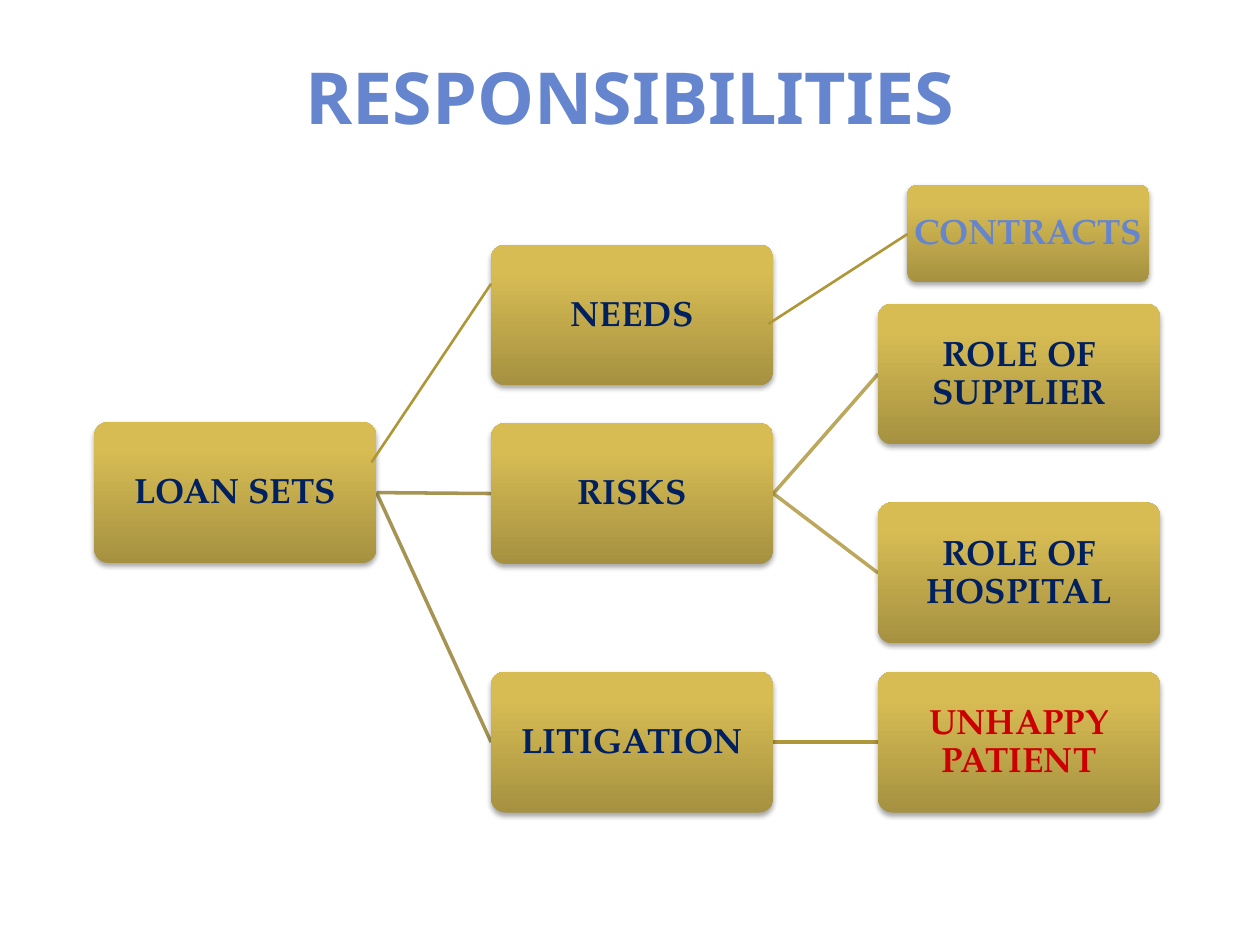
"""Build the slide on responsibilities for loan sets."""
from lxml import etree
from pptx import Presentation, util as u
from pptx.dml.color import RGBColor
from pptx.enum import shapes, text
from pptx.oxml import ns

TITLE = "RESPONSIBILITIES"
NAVY, BLUE, RED = "002060", "6585CF", "CC0000"
GRADIENT = [(0, "A59140"), (80, "D7BC54"), (100, "DABF52")]
COLUMNS = [1.9, 9.9, 17.7]
BOX_WIDTH, BOX_HEIGHT = 5.69, 2.84
BOXES = {
    "LOAN SETS": (0, 8.51, NAVY),
    "NEEDS": (1, 4.93, NAVY),
    "RISKS": (1, 8.53, NAVY),
    "LITIGATION": (1, 13.54, NAVY),
    "ROLE OF SUPPLIER": (2, 6.12, NAVY),
    "ROLE OF HOSPITAL": (2, 10.13, NAVY),
    "UNHAPPY PATIENT": (2, 13.54, RED),
}
LINKS = [
    ("LOAN SETS", "RISKS", "A59452"),
    ("LOAN SETS", "LITIGATION", "A59452"),
    ("RISKS", "ROLE OF SUPPLIER", "BBA85D"),
    ("RISKS", "ROLE OF HOSPITAL", "BBA85D"),
    ("LITIGATION", "UNHAPPY PATIENT", "AF9738"),
]
CONTRACTS = ("CONTRACTS", 18.29, 3.73, 4.88, 1.96, BLUE)
SLANTED_LINES = [(7.49, 9.32, 9.9, 5.72), (15.49, 6.53, 18.29, 4.72)]


def color(value):
    return RGBColor.from_string(value)


def add_element(parent, tag, **attributes):
    values = {name: str(value) for name, value in attributes.items()}
    return etree.SubElement(parent, ns.qn(tag), values)


def write(shape, words, font_name, size, font_color):
    frame = shape.text_frame
    frame.word_wrap = True
    frame.vertical_anchor = text.MSO_ANCHOR.MIDDLE
    paragraph = frame.paragraphs[0]
    paragraph.alignment = text.PP_ALIGN.CENTER
    run = paragraph.add_run()
    run.text = words
    run.font.name = font_name
    run.font.size = u.Pt(size)
    run.font.bold = True
    run.font.color.rgb = color(font_color)
    return frame


def add_box(slide, words, left, top, width, height, font_color):
    shape = slide.shapes.add_shape(
        shapes.MSO_SHAPE.ROUNDED_RECTANGLE,
        u.Cm(left), u.Cm(top), u.Cm(width), u.Cm(height))
    shape.adjustments[0] = 0.1
    shape.line.fill.background()
    shape.fill.gradient()
    shape.fill.gradient_angle = 90
    properties = shape.element.spPr
    stops = properties.find(".//" + ns.qn("a:gsLst"))
    for stop in list(stops):
        stops.remove(stop)
    for position, value in GRADIENT:
        stop = add_element(stops, "a:gs", pos=position * 1000)
        add_element(stop, "a:srgbClr", val=value)
    shape.shadow.inherit = False
    shadow = add_element(
        properties.find(ns.qn("a:effectLst")), "a:outerShdw",
        blurRad=u.Pt(3.1), dist=u.Pt(1.8), dir=5400000, rotWithShape=0)
    shade = add_element(shadow, "a:srgbClr", val="000000")
    add_element(shade, "a:alpha", val=35000)
    frame = write(shape, words, "TeX Gyre Pagella", 20, font_color)
    frame.margin_left = frame.margin_right = u.Cm(0.03)
    frame.margin_top = frame.margin_bottom = u.Cm(0.03)
    frame.paragraphs[0].line_spacing = 0.9


def add_line(slide, ends, line_color, width):
    line = slide.shapes.add_connector(
        shapes.MSO_CONNECTOR.STRAIGHT, *(u.Cm(value) for value in ends))
    line.line.color.rgb = color(line_color)
    line.line.width = u.Pt(width)
    add_element(line.element.spPr, "a:effectLst")


def main():
    presentation = Presentation()
    presentation.slide_width, presentation.slide_height = u.Cm(25.4), u.Cm(19.05)
    slide = presentation.slides.add_slide(presentation.slide_layouts[6])
    for start, end, line_color in LINKS:
        start_column, start_top, _ = BOXES[start]
        end_column, end_top, _ = BOXES[end]
        ends = (COLUMNS[start_column] + BOX_WIDTH, start_top + BOX_HEIGHT / 2,
                COLUMNS[end_column], end_top + BOX_HEIGHT / 2)
        add_line(slide, ends, line_color, 2)
    for words, (column, top, font_color) in BOXES.items():
        add_box(slide, words, COLUMNS[column], top, BOX_WIDTH, BOX_HEIGHT, font_color)
    add_box(slide, *CONTRACTS)
    title = slide.shapes.add_textbox(u.Cm(1.27), u.Cm(0.76), u.Cm(22.86), u.Cm(2.36))
    write(title, TITLE, "Noto Sans", 41, BLUE)
    for ends in SLANTED_LINES:
        add_line(slide, ends, "AF9738", 1.5)
    presentation.save("out.pptx")


if __name__ == "__main__":
    main()
